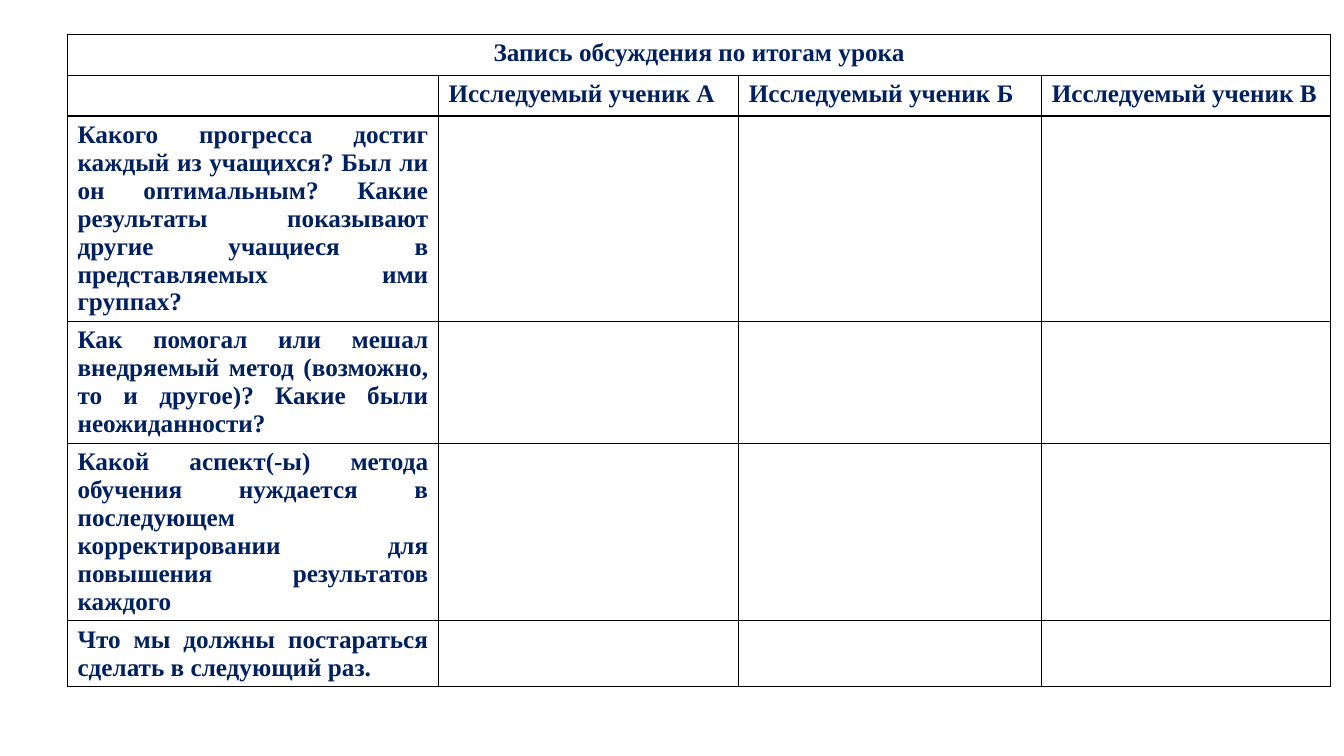
from dataclasses import dataclass

from lxml import etree
from pptx import Presentation
from pptx.dml.color import RGBColor
from pptx.enum import text
from pptx.oxml import ns
from pptx.util import Pt


@dataclass(frozen=True)
class Theme:
    font: str = "Times New Roman"
    size: float = 18
    ink: str = "002060"
    paper: str = "FFFFFF"
    border: str = "000000"
    border_width: float = 1


class SlideBuilder:
    def __init__(self, slide, theme):
        self.slide = slide
        self.theme = theme

    def table(self, left, top, widths, heights, rows):
        """Add a bordered table whose first row is one merged, centred heading."""
        table = self.slide.shapes.add_table(
            len(heights), len(widths), Pt(left), Pt(top),
            Pt(sum(widths)), Pt(sum(heights))).table
        table.first_row = table.horz_banding = False
        for column, width in zip(table.columns, widths):
            column.width = Pt(width)
        for row, height in zip(table.rows, heights):
            row.height = Pt(height)
        for cell in table.iter_cells():
            self.cell_style(cell)
        table.cell(0, 0).merge(table.cell(0, len(widths) - 1))
        for row_index, (alignment, values) in enumerate(rows):
            for column_index, value in enumerate(values):
                if value:
                    self.cell_text(table.cell(row_index, column_index), value, alignment)

    def cell_style(self, cell):
        properties = cell._tc.get_or_add_tcPr()
        for side in ("lnL", "lnR", "lnT", "lnB"):
            line = etree.SubElement(properties, ns.qn(f"a:{side}"),
                                    w=str(Pt(self.theme.border_width)))
            fill = etree.SubElement(line, ns.qn("a:solidFill"))
            etree.SubElement(fill, ns.qn("a:srgbClr"), val=self.theme.border)
        cell.fill.solid()
        cell.fill.fore_color.rgb = RGBColor.from_string(self.theme.paper)

    def cell_text(self, cell, value, alignment):
        paragraph = cell.text_frame.paragraphs[0]
        paragraph.alignment = alignment
        run = paragraph.add_run()
        run.text = value
        font_format = {"name": self.theme.font, "size": Pt(self.theme.size), "bold": True}
        for name, setting in font_format.items():
            setattr(run.font, name, setting)
        run.font.color.rgb = RGBColor.from_string(self.theme.ink)


QUESTIONS = [
    "Какого прогресса достиг каждый из учащихся? Был ли он оптимальным? "
    "Какие результаты показывают другие учащиеся в представляемых ими группах?",
    "Как помогал или мешал внедряемый метод (возможно, то и другое)? "
    "Какие были неожиданности?",
    "Какой аспект(-ы) метода обучения нуждается в последующем "
    "корректировании для повышения результатов каждого",
    "Что мы должны постараться сделать в следующий раз.",
]


def main():
    presentation = Presentation()
    presentation.slide_width, presentation.slide_height = Pt(960), Pt(540)
    slide = presentation.slides.add_slide(presentation.slide_layouts[6])
    builder = SlideBuilder(slide, Theme())

    align = text.PP_ALIGN
    pupils = [f"Исследуемый ученик {letter}" for letter in "АБВ"]
    rows = [(align.CENTER, ["Запись обсуждения по итогам урока"]),
            (align.LEFT, ["", *pupils])]
    rows += [(align.JUSTIFY, [question]) for question in QUESTIONS]
    builder.table(left=48.2, top=24.5,
                  widths=[265, 214.5, 216.5, 206.5],
                  heights=[29.2, 29.2, 146.6, 87, 126.6, 47],
                  rows=rows)
    presentation.save("out.pptx")


if __name__ == "__main__":
    main()
